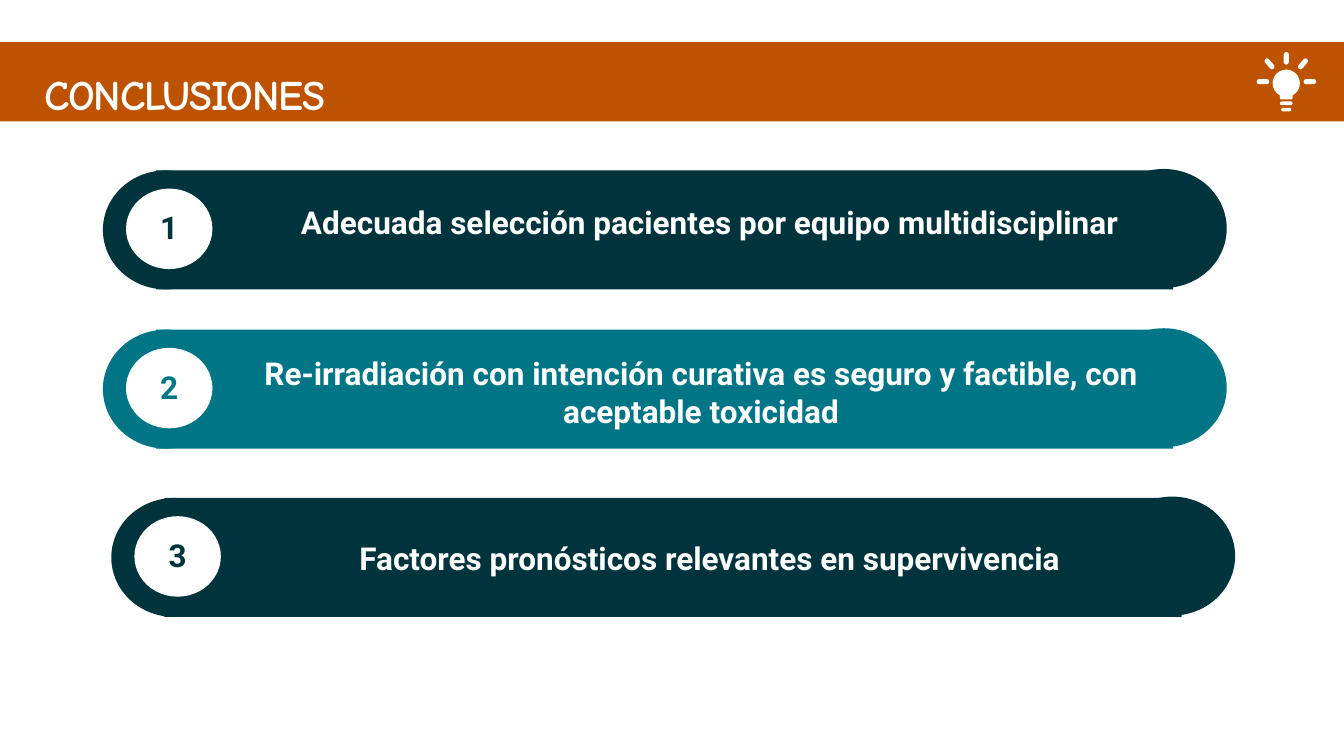
from pptx import Presentation
from pptx.dml.color import RGBColor
from pptx.enum.shapes import MSO_SHAPE
from pptx.enum.text import MSO_ANCHOR, MSO_AUTO_SIZE, PP_ALIGN
from pptx.util import Pt

WHITE, NAVY, TEAL, ORANGE = "FFFFFF", "00343D", "007586", "BD5300"

# number, conclusion, colour, bar left and top, caption left and top
CONCLUSIONS = [
    ("1", "Adecuada selección pacientes por equipo multidisciplinar",
     NAVY, (147, 243.4), (317.5, 286.6)),
    ("2", "Re-irradiación con intención curativa es seguro y factible, "
     "con aceptable toxicidad", TEAL, (147, 470.9), (305.3, 502.6)),
    ("3", "Factores pronósticos relevantes en supervivencia",
     NAVY, (159, 711.4), (317.5, 766.8)),
]

# centre x, centre y, length, thickness, rotation
BULB_STROKES = [
    (1837.5, 83.2, 18, 7.2, 90),
    (1804.3, 116.6, 18, 7.2, 0),
    (1871.3, 116.6, 18, 7.2, 0),
    (1813.6, 91.2, 18, 7.2, 50),
    (1861.4, 91.2, 18, 7.2, -50),
    (1837.5, 147.6, 18, 5.4, 0),
    (1837.5, 156.6, 14.4, 5, 0),
]


def paint(target, colour):
    target.fill.solid()
    target.fill.fore_color.rgb = RGBColor.from_string(colour)


def add_solid(slide, preset, left, top, width, height, colour):
    solid = slide.shapes.add_shape(
        preset, Pt(left), Pt(top), Pt(width), Pt(height))
    paint(solid, colour)
    solid.line.fill.background()
    solid.shadow.inherit = False
    return solid


def write(frame, text, size, font, colour, align):
    paragraph = frame.paragraphs[0]
    paragraph.alignment = align
    run = paragraph.add_run()
    run.text = text
    run.font.name = font
    run.font.size = Pt(size)
    run.font.bold = True
    run.font.color.rgb = RGBColor.from_string(colour)
    return run


def add_heading(slide, text):
    heading = slide.shapes.title
    heading.left, heading.top = Pt(0), Pt(60)
    heading.width, heading.height = Pt(1920), Pt(113.5)
    paint(heading, ORANGE)
    frame = heading.text_frame
    frame.auto_size = MSO_AUTO_SIZE.NONE
    frame.vertical_anchor = MSO_ANCHOR.BOTTOM
    frame.margin_left = Pt(63)
    frame.margin_top = frame.margin_right = frame.margin_bottom = Pt(4.5)
    run = write(frame, text, 60, "Comic Neue", WHITE, PP_ALIGN.LEFT)
    run.font._element.set("spc", "-160")
    frame.paragraphs[0].line_spacing = 0.8


def add_light_bulb(slide):
    add_solid(slide, MSO_SHAPE.OVAL, 1818, 99.4, 39, 39, WHITE)
    add_solid(slide, MSO_SHAPE.ROUNDED_RECTANGLE, 1828.5, 130, 18, 12, WHITE)
    for x, y, length, thickness, rotation in BULB_STROKES:
        stroke = add_solid(slide, MSO_SHAPE.ROUNDED_RECTANGLE, x - length / 2,
                           y - thickness / 2, length, thickness, WHITE)
        stroke.adjustments[0] = 0.5
        stroke.rotation = rotation


def add_bar(slide, left, top, number, colour):
    """Bar with two round ends and a white numbered disc."""
    add_solid(slide, MSO_SHAPE.RECTANGLE, left + 76, top, 1453, 170, colour)
    add_solid(slide, MSO_SHAPE.OVAL, left, top, 180, 170, colour)
    add_solid(slide, MSO_SHAPE.OVAL, left + 1425.5, top - 2, 180, 170, colour)
    disc = add_solid(slide, MSO_SHAPE.OVAL, left + 33, top + 26, 123.5, 115,
                     WHITE)
    disc.text_frame.vertical_anchor = MSO_ANCHOR.MIDDLE
    disc.text_frame.margin_bottom = Pt(8)
    write(disc.text_frame, number, 45, "Roboto", colour, PP_ALIGN.CENTER)


def add_caption(slide, left, top, text):
    caption = slide.shapes.add_textbox(Pt(left), Pt(top), Pt(1392.5), Pt(62))
    caption.text_frame.word_wrap = True
    caption.text_frame.auto_size = MSO_AUTO_SIZE.SHAPE_TO_FIT_TEXT
    write(caption.text_frame, text, 45, "Roboto", WHITE, PP_ALIGN.CENTER)


def main():
    deck = Presentation()
    deck.slide_width, deck.slide_height = Pt(1920), Pt(1080)
    slide = deck.slides.add_slide(deck.slide_layouts[5])
    add_heading(slide, "CONCLUSIONES")
    add_light_bulb(slide)
    for number, text, colour, bar_corner, caption_corner in CONCLUSIONS:
        add_bar(slide, *bar_corner, number, colour)
        add_caption(slide, *caption_corner, text)
    deck.save("out.pptx")


if __name__ == "__main__":
    main()
